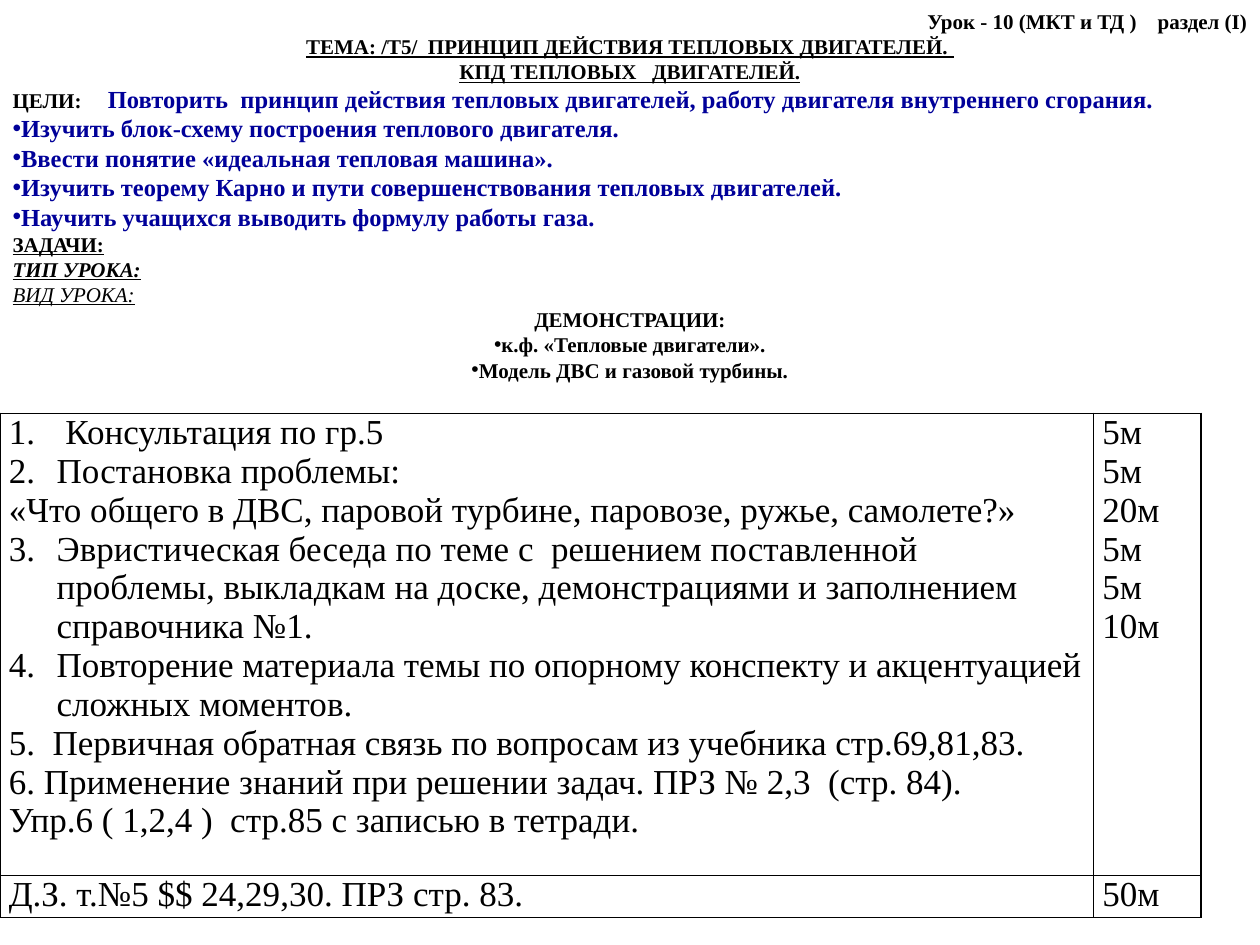
from lxml import etree
from pptx import Presentation
from pptx.dml.color import RGBColor
from pptx.enum.text import MSO_ANCHOR, MSO_AUTO_SIZE, PP_ALIGN
from pptx.oxml.ns import qn
from pptx.util import Inches, Pt

LEFT, MID, RIGHT = PP_ALIGN.LEFT, PP_ALIGN.CENTER, PP_ALIGN.RIGHT
MIDDLE = MSO_ANCHOR.MIDDLE
GROW = MSO_AUTO_SIZE.SHAPE_TO_FIT_TEXT
FONT = "Times New Roman"
COLORS = {"black": "000000", "blue": "000099"}

BOLD = {"bold": True}
LINE = {"bold": True, "under": True}
AIM = {"bold": True, "size": 14, "color": "blue"}

INTRO = [
    (RIGHT, None, [("Урок - 10 (МКТ и ТД )    раздел (I)", BOLD)]),
    (MID, None, [("ТЕМА: /Т5/  ПРИНЦИП ДЕЙСТВИЯ ТЕПЛОВЫХ ДВИГАТЕЛЕЙ. ", LINE)]),
    (MID, None, [("КПД ТЕПЛОВЫХ   ДВИГАТЕЛЕЙ.", LINE)]),
    (LEFT, None, [
        ("ЦЕЛИ:     ", BOLD),
        ("Повторить  принцип действия тепловых двигателей, "
         "работу двигателя внутреннего сгорания.", AIM)]),
    (LEFT, "•", [("Изучить блок-схему построения теплового двигателя.", AIM)]),
    (LEFT, "•", [("Ввести понятие «идеальная тепловая машина».", AIM)]),
    (LEFT, "•", [("Изучить теорему Карно и пути совершенствования "
                  "тепловых двигателей.", AIM)]),
    (LEFT, "•", [("Научить учащихся выводить формулу работы газа.", AIM)]),
    (LEFT, None, [("ЗАДАЧИ:", LINE), (" ", {"ital": True})]),
    (LEFT, None, [("ТИП УРОКА:", {**LINE, "ital": True})]),
    (LEFT, None, [("ВИД УРОКА:", {"under": True, "ital": True})]),
    (MID, None, [("ДЕМОНСТРАЦИИ:", BOLD)]),
    (MID, "•", [("к.ф. «Тепловые двигатели».", BOLD)]),
    (MID, "•", [("Модель ДВС и газовой турбины.", BOLD)]),
]

STEPS = [
    (1, " Консультация по гр.5"),
    (1, "Постановка проблемы:"),
    (None, "«Что общего в ДВС, паровой турбине, паровозе, ружье, самолете?»"),
    (3, "Эвристическая беседа по теме с  решением поставленной проблемы, "
        "выкладкам на доске, демонстрациями и заполнением справочника №1."),
    (3, "Повторение материала темы по опорному конспекту и акцентуацией "
        "сложных моментов."),
    (None, "5.  Первичная обратная связь по вопросам из учебника стр.69,81,83."),
    (None, "6. Применение знаний при решении задач. ПРЗ № 2,3  (стр. 84)."),
    (None, "Упр.6 ( 1,2,4 )  стр.85 с записью в тетради."),
]
TIMES = [(None, time) for time in ("5м", "5м", "20м", "5м", "5м", "10м")]
PLAN = [
    [STEPS, TIMES],
    [[(None, "Д.З. т.№5 $$ 24,29,30. ПРЗ стр. 83.")], [(None, "50м")]],
]


def add_run(para, text, size=12, color="black", bold=False, ital=False,
            under=False):
    run = para.add_run()
    run.text = text
    font = run.font
    font.name, font.size = FONT, Pt(size)
    font.bold, font.italic, font.underline = bold, ital, under
    font.color.rgb = RGBColor.from_string(COLORS[color])


def next_para(frame, first):
    para = frame.paragraphs[0] if first else frame.add_paragraph()
    para.space_before = Pt(0)
    return para


def set_mark(para, tag, indent=0, **attrs):
    props = para._p.get_or_add_pPr()
    props.set("marL", str(Inches(indent)))
    props.set("indent", str(-Inches(indent)))
    etree.SubElement(props, qn(tag), attrs)


def add_intro(slide):
    body = slide.placeholders[1]
    body.left, body.top = Inches(0), Inches(0)
    body.width, body.height = Inches(10), Inches(3.1)
    frame = body.text_frame
    frame.word_wrap = True
    frame.auto_size = GROW
    frame.vertical_anchor = MIDDLE
    for i, (align, mark, runs) in enumerate(INTRO):
        para = next_para(frame, i == 0)
        para.alignment = align
        if mark:
            set_mark(para, "a:buChar", char=mark)
        else:
            set_mark(para, "a:buNone")
        for text, look in runs:
            add_run(para, text, **look)


def set_edges(cell):
    props = cell._tc.get_or_add_tcPr()
    for side in ("L", "R", "T", "B"):
        edge = etree.SubElement(props, qn("a:ln" + side), w=str(Pt(1)))
        fill = etree.SubElement(edge, qn("a:solidFill"))
        etree.SubElement(fill, qn("a:srgbClr"), val=COLORS["black"])


def fill_cell(cell, items):
    set_edges(cell)
    cell.fill.background()
    cell.margin_left = cell.margin_right = Inches(0.07)
    cell.margin_top = cell.margin_bottom = 0
    for i, (start, text) in enumerate(items):
        para = next_para(cell.text_frame, i == 0)
        if start:
            set_mark(para, "a:buAutoNum", 0.38, type="arabicPeriod",
                     startAt=str(start))
        add_run(para, text, size=20)


def add_plan(slide):
    table = slide.shapes.add_table(
        2, 2, Inches(0), Inches(3.28), Inches(9.53), Inches(3.7)).table
    table.first_row = table.horz_banding = False
    for col, width in zip(table.columns, (8.68, 0.85)):
        col.width = Inches(width)
    for row, height in zip(table.rows, (3.39, 0.31)):
        row.height = Inches(height)
    for r, row in enumerate(PLAN):
        for c, items in enumerate(row):
            fill_cell(table.cell(r, c), items)


def main():
    deck = Presentation()
    deck.slide_width, deck.slide_height = Inches(10), Inches(7.5)
    slide = deck.slides.add_slide(deck.slide_layouts[1])
    title = slide.shapes.title._element
    title.getparent().remove(title)
    add_plan(slide)
    add_intro(slide)
    deck.save("out.pptx")


if __name__ == "__main__":
    main()
